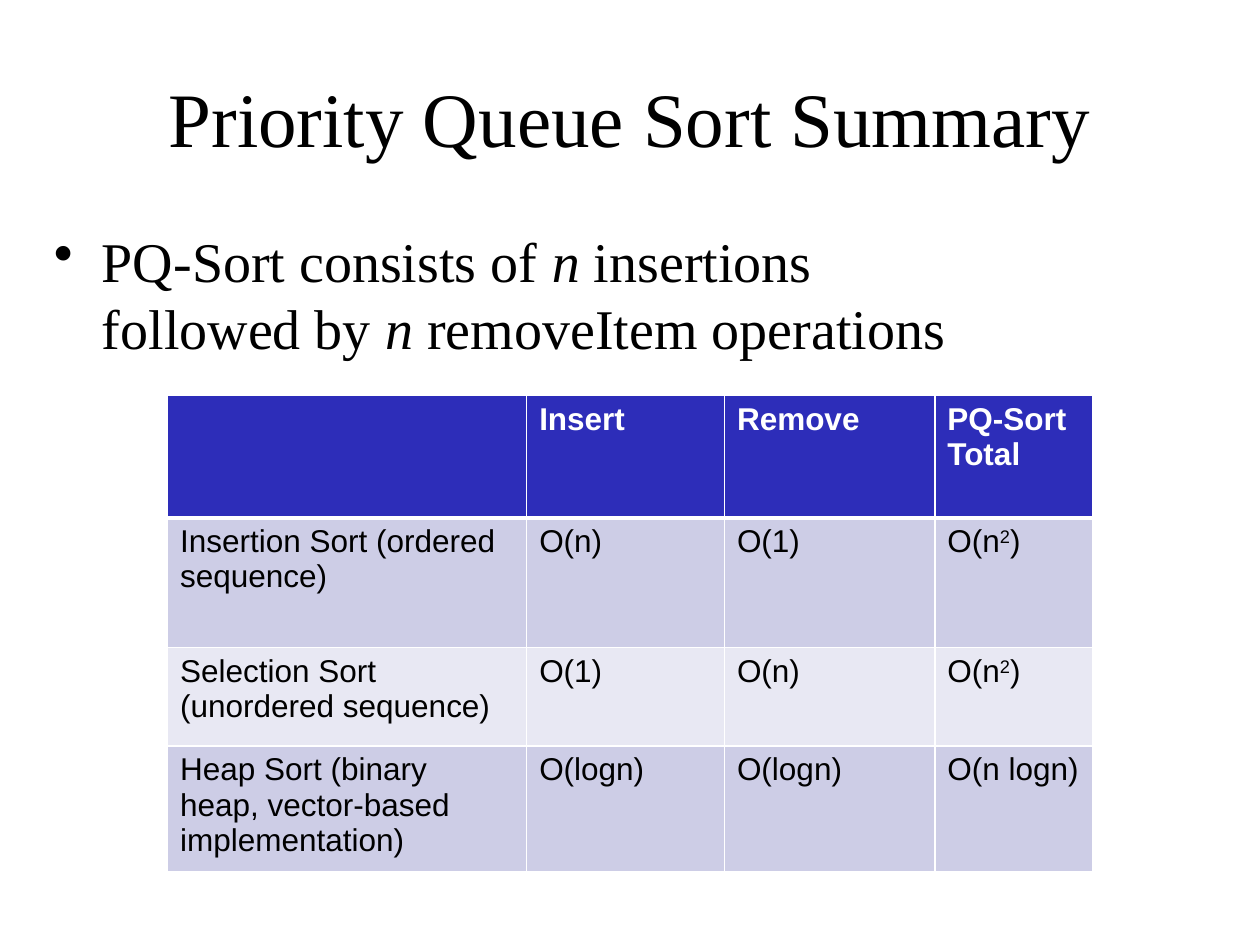
import pptx
import pptx.dml.color
import pptx.enum.text
import pptx.oxml
import pptx.oxml.ns
import pptx.util
from lxml import etree

Inches, Pt = pptx.util.Inches, pptx.util.Pt
SERIF, SANS = "Times New Roman", "Arial"
BLACK, WHITE = "000000", "FFFFFF"
HEADER_FILL, ROW_FILLS = "2D2DB9", ("CDCDE6", "E8E8F3")

COLUMNS = (2.85, 1.57, 1.67, 1.25)
ROWS = (0.97, 1.03, 0.78, 0.78)
# Text between carets is superscript
CONTENT = (
    ("", "Insert", "Remove", "PQ-Sort Total"),
    ("Insertion Sort (ordered sequence)", "O(n)", "O(1)", "O(n^2^)"),
    ("Selection Sort (unordered sequence)", "O(1)", "O(n)", "O(n^2^)"),
    ("Heap Sort (binary heap, vector-based implementation)",
     "O(logn)", "O(logn)", "O(n logn)"),
)


def color(value):
    return pptx.dml.color.RGBColor.from_string(value)


def add_text(para, text, font=SERIF, size=32, fill=BLACK, bold=False,
             italic=False, superscript=False):
    span = para.add_run()
    span.text = text
    span.font.name, span.font.size = font, Pt(size)
    span.font.bold, span.font.italic = bold, italic
    span.font.color.rgb = color(fill)
    if superscript:
        span.font._element.set("baseline", "30000")


def place(shape, left, top, width, height):
    shape.left, shape.top = Inches(left), Inches(top)
    shape.width, shape.height = Inches(width), Inches(height)


def add_title(page, text):
    title = page.shapes.title
    place(title, 0.5, 0.3, 9, 1.25)
    title.text_frame.vertical_anchor = pptx.enum.text.MSO_ANCHOR.MIDDLE
    para = title.text_frame.paragraphs[0]
    para.alignment = pptx.enum.text.PP_ALIGN.CENTER
    add_text(para, text, size=44)


def add_bullet(page, lines):
    box = page.shapes.add_textbox(0, 0, 0, 0)
    place(box, 0.33, 1.75, 9.58, 4.75)
    box.text_frame.word_wrap = True
    para = box.text_frame.paragraphs[0]
    para.space_before = Pt(6.4)
    # Hanging bullet
    properties = para._p.get_or_add_pPr()
    properties.set("marL", str(Inches(0.38)))
    properties.set("indent", str(Inches(-0.38)))
    bullet = etree.SubElement(properties, pptx.oxml.ns.qn("a:buChar"))
    bullet.set("char", "•")
    for number, line in enumerate(lines):
        if number:
            para.add_line_break()
        for text, italic in line:
            add_text(para, text, italic=italic)


def set_border(cell, side, width):
    line = pptx.oxml.parse_xml(
        f'<a:{side} {pptx.oxml.ns.nsdecls("a")} w="{Pt(width)}"><a:solidFill>'
        f'<a:srgbClr val="{WHITE}"/></a:solidFill></a:{side}>')
    cell._tc.get_or_add_tcPr().append(line)


def fill_cell(cell, text, row):
    header = row == 0
    # Borders come before the fill; the rule under the header is thick
    widths = {"lnL": 1, "lnR": 1, "lnT": 3 if row == 1 else 1,
              "lnB": 3 if header else 1}
    for side, width in widths.items():
        set_border(cell, side, width)
    cell.fill.solid()
    cell.fill.fore_color.rgb = color(
        HEADER_FILL if header else ROW_FILLS[(row - 1) % 2])
    para = cell.text_frame.paragraphs[0]
    for number, part in enumerate(text.split("^")):
        if part:
            add_text(para, part, font=SANS, size=18, bold=header,
                     fill=WHITE if header else BLACK,
                     superscript=number % 2 == 1)


def add_summary_table(page):
    frame = page.shapes.add_table(
        len(ROWS), len(COLUMNS), Inches(1.33), Inches(3.14),
        Inches(sum(COLUMNS)), Inches(sum(ROWS)))
    table = frame.table
    for column, width in zip(table.columns, COLUMNS):
        column.width = Inches(width)
    for row, height in enumerate(ROWS):
        table.rows[row].height = Inches(height)
        for column, text in enumerate(CONTENT[row]):
            fill_cell(table.cell(row, column), text, row)


def main():
    deck = pptx.Presentation()
    deck.slide_width, deck.slide_height = Inches(10), Inches(7.5)
    page = deck.slides.add_slide(deck.slide_layouts[5])
    add_title(page, "Priority Queue Sort Summary")
    add_bullet(page, (
        (("PQ-Sort consists of ", False), ("n", True), (" insertions ", False)),
        (("followed by ", False), ("n ", True),
         ("removeItem operations", False)),
    ))
    add_summary_table(page)
    deck.save("out.pptx")


if __name__ == "__main__":
    main()
